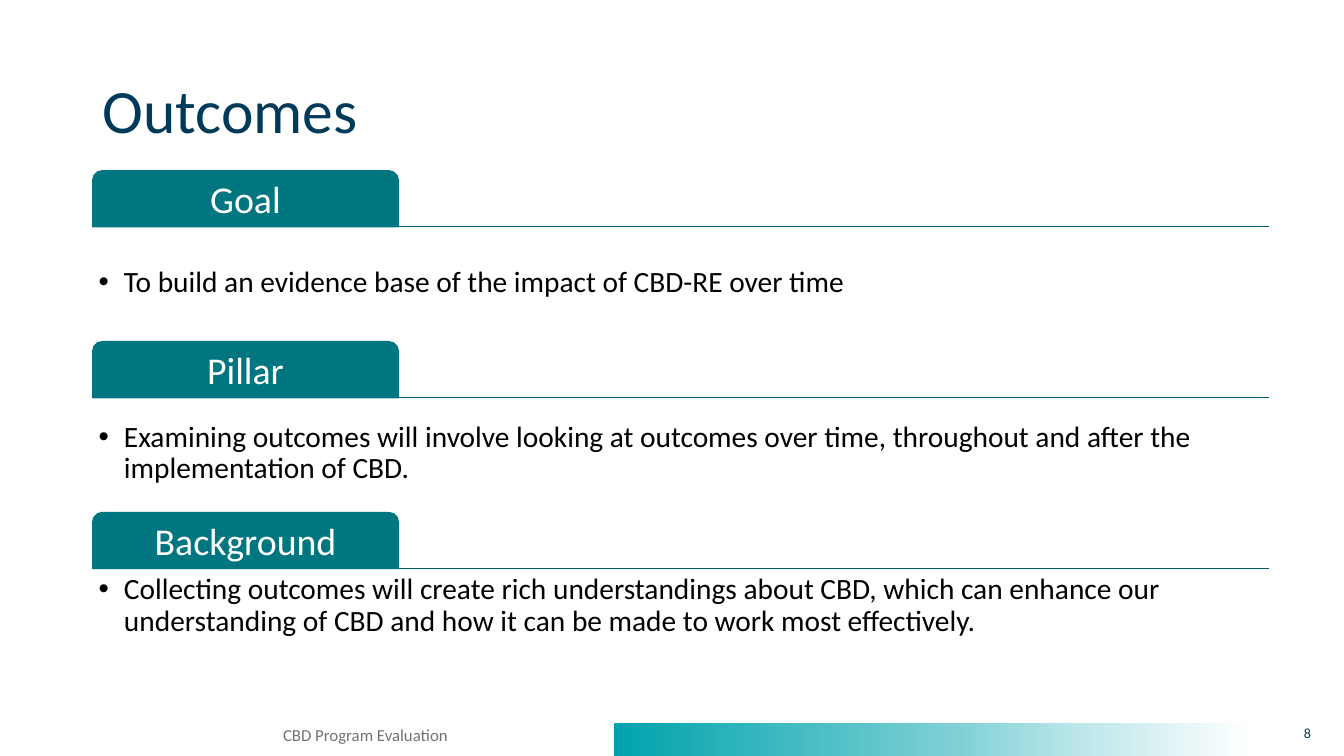
from pptx import Presentation
from pptx.dml.color import RGBColor
from pptx.enum.shapes import MSO_CONNECTOR as Link, MSO_SHAPE as Kind
from pptx.enum.text import MSO_ANCHOR as Anchor, PP_ALIGN as Align
from pptx.oxml.ns import qn
from pptx.util import Inches, Pt
from lxml.etree import SubElement as Sub

WIDE, HIGH = Inches(13.33), Inches(7.5)
FONT = "Calibri"
INK = {"navy": "003A5B", "teal": "007680", "rule": "005E67",
       "white": "FFFFFF", "black": "000000", "grey": "767171"}
FADE = [(0, "00A3AD"), (54, "80D1D6"), (74, "C0E8EB"), (100, "FFFFFF")]

# Section grid, in percent of the slide
LEFT, SPAN = 6.9, 87.5
TOP, STEP = 22.6, 22.6
TAB_W, TAB_H, BODY_H = 22.74, 7.4, 14.8

PARTS = [
    ("Goal", "To build an evidence base of the impact of CBD-RE over time",
     Anchor.MIDDLE),
    ("Pillar", "Examining outcomes will involve looking at outcomes over time, "
     "throughout and after the implementation of CBD.", Anchor.MIDDLE),
    ("Background", "Collecting outcomes will create rich understandings about "
     "CBD, which can enhance our understanding of CBD and how it can be made "
     "to work most effectively.", Anchor.TOP),
]


def area(x, y, w, h):
    """Turn percent shares into slide lengths."""
    return [int(whole * part / 100) for whole, part in
            zip((WIDE, HIGH, WIDE, HIGH), (x, y, w, h))]


def tint(name):
    return RGBColor.from_string(INK[name])


def write(shape, text, size, ink, align=Align.LEFT, anchor=Anchor.TOP,
          space=None, inset=None, bullet=False):
    frame = shape.text_frame
    frame.word_wrap = True
    frame.vertical_anchor = anchor
    if inset:
        (frame.margin_left, frame.margin_top,
         frame.margin_right, frame.margin_bottom) = map(Inches, inset)
    para = frame.paragraphs[0]
    para.text = text
    para.alignment = align
    if space:
        para.line_spacing = space
    if bullet:
        props = para._p.get_or_add_pPr()
        props.set("marL", str(Inches(0.25)))
        props.set("indent", str(-Inches(0.25)))
        Sub(props, qn("a:buFont"), typeface="Arial")
        Sub(props, qn("a:buChar"), char="•")
    font = para.font
    font.name, font.size = FONT, Pt(size)
    font.color.rgb = tint(ink)


def add_text(slide, box, *args, **more):
    write(slide.shapes.add_textbox(*area(*box)), *args, **more)


def add_rule(slide, y):
    x, y, w, _ = area(LEFT, y, SPAN, 0)
    rule = slide.shapes.add_connector(Link.STRAIGHT, x, y, x + w, y)
    rule.line.color.rgb = tint("rule")
    rule.line.width = Pt(1)
    Sub(rule._element.spPr, qn("a:effectLst"))


def add_tab(slide, y, label):
    tab = slide.shapes.add_shape(Kind.ROUND_2_SAME_RECTANGLE,
                                 *area(LEFT, y, TAB_W, TAB_H))
    tab.shadow.inherit = False
    tab.adjustments[0], tab.adjustments[1] = 0.17, 0
    tab.fill.solid()
    tab.fill.fore_color.rgb = tab.line.color.rgb = tint("teal")
    tab.line.width = Pt(1)
    write(tab, label, 27, "white", Align.CENTER, Anchor.MIDDLE, 0.9,
          (0.06, 0.09, 0.06, 0.06))


def add_part(slide, y, label, text, anchor):
    base = y + TAB_H
    add_rule(slide, base)
    add_tab(slide, y, label)
    add_text(slide, (LEFT, base, SPAN, BODY_H), text, 21, "black",
             anchor=anchor, space=0.9, inset=(0.06,) * 4, bullet=True)


def add_band(slide):
    band = slide.shapes.add_shape(Kind.RECTANGLE, *area(45.7, 95.6, 47.5, 4.4))
    band.shadow.inherit = False
    band.line.fill.background()
    band.fill.gradient()
    band.fill.gradient_angle = 0
    stops = band._element.spPr.find(qn("a:gradFill")).find(qn("a:gsLst"))
    for stop in list(stops):
        stops.remove(stop)
    for share, shade in FADE:
        stop = Sub(stops, qn("a:gs"), pos=str(share * 1000))
        Sub(stop, qn("a:srgbClr"), val=shade)


def main():
    deck = Presentation()
    deck.slide_width, deck.slide_height = WIDE, HIGH
    slide = deck.slides.add_slide(deck.slide_layouts[6])

    # Footer band and title
    add_band(slide)
    add_text(slide, (LEFT, 5.33, 86.25, 19.33), "Outcomes", 44, "navy",
             anchor=Anchor.MIDDLE, space=0.9)

    # Sections
    for row, part in enumerate(PARTS):
        add_part(slide, TOP + row * STEP, *part)

    # Footer text and page number
    add_text(slide, (10.58, 95.2, 33.23, 4.67), "CBD Program Evaluation", 12,
             "grey", Align.CENTER)
    add_text(slide, (93.17, 95.2, 5.1, 4.67), "8", 10, "navy", Align.RIGHT)

    deck.save("out.pptx")


if __name__ == "__main__":
    main()
